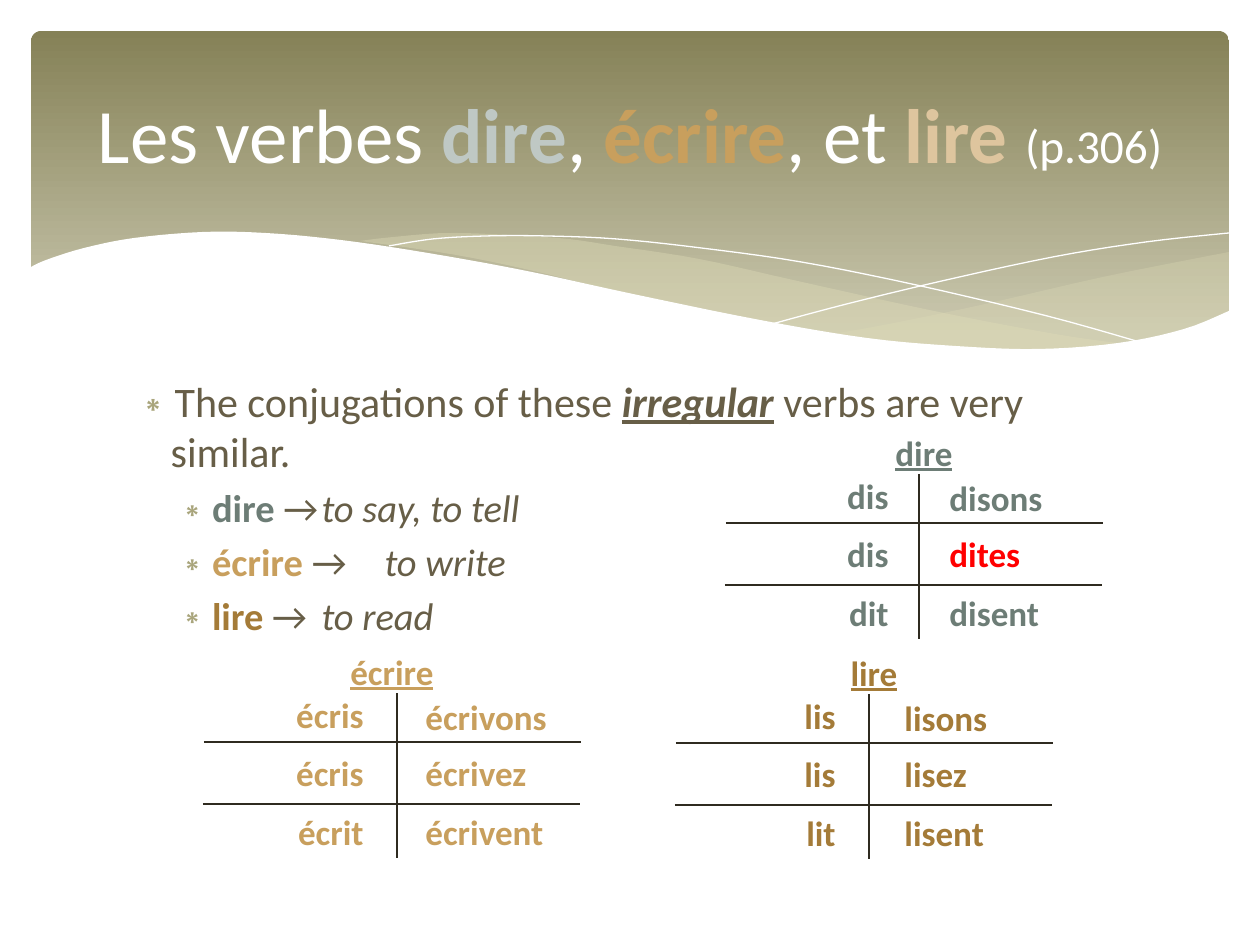
from lxml import etree
from pptx import Presentation, util as u
from pptx.dml.color import RGBColor
from pptx.enum import shapes, text
from pptx.oxml import ns

PX = 914400 / 126
WHITE, BROWN, INK = "FFFFFF", "675E47", "2F2B20"
SLATE, GOLD, OCHRE, RED = "6D7D76", "C89F5D", "A47B38", "FF0000"
LEFT, CENTER, RIGHT = text.PP_ALIGN.LEFT, text.PP_ALIGN.CENTER, text.PP_ALIGN.RIGHT

# Key points of the banner's curves, in px
WAVE = [(29, 268), (46, 260), (84, 248), (134, 238), (203, 232), (266, 233),
        (341, 240), (428, 253), (527, 271), (633, 294), (760, 320), (867, 338),
        (956, 346), (1038, 349), (1118, 343), (1184, 329), (1231, 310)]
SWOOSH_LOW = [(360, 241), (456, 255), (538, 272), (619, 292), (736, 317), (819, 332),
              (893, 343), (959, 349), (1030, 350), (1092, 348), (1125, 344)]
SWOOSH_TOP = [(1125, 344), (1055, 334), (934, 311), (793, 280), (699, 259),
              (615, 246), (557, 238), (455, 233), (394, 237), (360, 241)]
FIN_TOP = [(1229, 252), (1142, 269), (1085, 281), (981, 305), (889, 324), (833, 334)]
FIN_LOW = [(833, 334), (888, 342), (953, 348), (1012, 350), (1087, 347),
           (1150, 338), (1196, 326), (1229, 311)]
FALLING = [(389, 246), (433, 239), (487, 236), (545, 236), (616, 239), (701, 248),
           (801, 262), (916, 285), (1047, 316), (1143, 343)]
RISING = [(772, 324), (847, 304), (942, 281), (1053, 257), (1146, 242), (1229, 233)]


def px(n):
    return u.Emu(round(n * PX))


def rgb(c):
    return RGBColor.from_string(c)


def sub(parent, tag, **attrs):
    return etree.SubElement(parent, ns.qn(tag), attrs)


def place(sp, x, y, w, h):
    sp.left, sp.top, sp.width, sp.height = px(x), px(y), px(w), px(h)


def add_run(p, words, size=20, color=BROWN, bold=False, italic=False, underline=False):
    r = p.add_run()
    r.text = words
    f = r.font
    f.name, f.size, f.color.rgb = "Calibri", u.Pt(size), rgb(color)
    f.bold, f.italic, f.underline = bold, italic, underline


def add_label(s, words, x, y, w, align, **fmt):
    """Text box whose left, centre or right is at x, according to align."""
    shift = {LEFT: 0, CENTER: w / 2, RIGHT: w}[align]
    tf = s.shapes.add_textbox(px(x - shift), px(y), px(w), px(55)).text_frame
    tf.word_wrap = True
    tf.auto_size = text.MSO_AUTO_SIZE.SHAPE_TO_FIT_TEXT
    p = tf.paragraphs[0]
    p.alignment = align
    add_run(p, words, **fmt)


def add_rule(s, x1, y1, x2, y2):
    c = s.shapes.add_connector(shapes.MSO_CONNECTOR.STRAIGHT, px(x1), px(y1), px(x2), px(y2))
    c.line.color.rgb, c.line.width = rgb(INK), u.Pt(1.5)
    sub(c._element.spPr, "a:effectLst")


def smooth(pts, steps=5):
    """Catmull-Rom curve through the points."""
    ext = [pts[0], *pts, pts[-1]]
    out = [pts[0]]
    for a, b, c, d in zip(ext, ext[1:], ext[2:], ext[3:]):
        for t in (i / steps for i in range(1, steps + 1)):
            out.append(tuple(
                (2 * q + (r - p) * t + (2 * p - 5 * q + 4 * r - v) * t ** 2
                 + (3 * q - p - 3 * r + v) * t ** 3) / 2
                for p, q, r, v in zip(a, b, c, d)))
    return out


def add_outline(s, pts, fill=None, opacity=100):
    """Filled area, or a white hairline when there is no fill."""
    pts = [(px(x), px(y)) for x, y in pts]
    fb = s.shapes.build_freeform(*pts[0])
    fb.add_line_segments(pts[1:], close=fill is not None)
    sp = fb.convert_to_shape()
    sp.shadow.inherit = False
    if fill is None:
        sp.fill.background()
        sp.line.color.rgb, sp.line.width = rgb(WHITE), 0
        return
    sp.line.fill.background()
    sp.fill.solid()
    sp.fill.fore_color.rgb = rgb(fill)
    if opacity < 100:
        clr = sp._element.spPr.find(".//" + ns.qn("a:srgbClr"))
        sub(clr, "a:alpha", val=str(opacity * 1000))


def add_banner(s):
    sp = s.shapes.add_shape(shapes.MSO_SHAPE.ROUNDED_RECTANGLE, px(31), px(31), px(1198), px(340))
    sp.adjustments[0] = 0.03
    sp.shadow.inherit = False
    sp.line.fill.background()
    sp.fill.gradient()
    sp.fill.gradient_angle = 270
    for stop, pos, c in zip(sp.fill.gradient_stops, (0, 0.9), ("858157", "CBC9B0")):
        stop.position, stop.color.rgb = pos, rgb(c)
    add_outline(s, smooth(FIN_TOP) + smooth(FIN_LOW), "DFDCB7", 29)
    add_outline(s, smooth(SWOOSH_LOW) + smooth(SWOOSH_TOP), "DFDCB7", 40)
    add_outline(s, smooth(FALLING))
    add_outline(s, smooth(RISING))
    add_outline(s, smooth(WAVE) + [(1231, 414), (29, 414)], WHITE)


def fill_title(sp):
    place(sp, 63, 47, 1134, 172)
    sp.text_frame.vertical_anchor = text.MSO_ANCHOR.MIDDLE
    p = sp.text_frame.paragraphs[0]
    p.alignment = CENTER
    for words, color, bold in (("Les verbes ", WHITE, False), ("dire", "BFC8C4", True),
                               (", ", WHITE, False), ("écrire", GOLD, True),
                               (", et ", WHITE, False), ("lire ", "DEC59E", True)):
        add_run(p, words, size=44, color=color, bold=bold)
    add_run(p, "(p.306)", size=27, color=WHITE)


def add_bullet(p, level):
    p.level = level
    pPr = p._p.get_or_add_pPr()
    pPr.set("marL", str(px((38, 79)[level])))
    pPr.set("indent", str(px(-38)))
    sub(sub(pPr, "a:buClr"), "a:srgbClr", val="A9A57C")
    sub(pPr, "a:buChar", char="∗")


def fill_body(sp):
    place(sp, 120, 369, 1020, 475)
    tf = sp.text_frame
    tf.auto_size = text.MSO_AUTO_SIZE.NONE
    p = tf.paragraphs[0]
    add_bullet(p, 0)
    add_run(p, "The conjugations of these ", size=24)
    add_run(p, "irregular", size=24, bold=True, italic=True, underline=True)
    add_run(p, " verbs are very similar.", size=24)
    for verb, meaning, color in (("dire ", "to say, to tell", SLATE),
                                 ("écrire ", "to write", GOLD),
                                 ("lire ", "to read", OCHRE)):
        p = tf.add_paragraph()
        add_bullet(p, 1)
        add_run(p, verb, size=22, color=color, bold=True)
        add_run(p, "→\t", size=22)
        add_run(p, meaning, size=22, italic=True)


def add_conjugation(s, x, y, columns, verb, singular, plural, color, irregular=()):
    """Cross of rules with its top at (x, y); columns holds the x of heading and both sides."""
    middle, left, right = columns
    add_rule(s, x, y, x, y + 165)
    add_rule(s, x - 193, y + 49, x + 184, y + 49)
    add_rule(s, x - 194, y + 111, x + 183, y + 111)
    add_label(s, verb, middle, y - 49, 315, CENTER, color=color, bold=True, underline=True)
    for form, dy, w in zip(singular, (-6, 52, 111), (281, 261, 375)):
        add_label(s, form, left, y + dy, w, RIGHT, color=color, bold=True)
    for form, dy in zip(plural, (-4, 52, 111)):
        add_label(s, form, right, y + dy, 320, LEFT, bold=True,
                  color=RED if form in irregular else color)


def main():
    prs = Presentation()
    prs.slide_width, prs.slide_height = px(1260), px(945)
    s = prs.slides.add_slide(prs.slide_layouts[1])
    title, body = s.placeholders

    # Banner, with the placeholders brought in front of it
    add_banner(s)
    for sp in (body, title):
        s.shapes._spTree.append(sp._element)
    fill_title(title)
    fill_body(body)

    # Conjugation tables
    add_conjugation(s, 869, 694, (874, 848, 892), "lire",
                    ("lis", "lis", "lit"), ("lisons", "lisez", "lisent"), OCHRE)
    add_conjugation(s, 919, 474, (924, 901, 937), "dire",
                    ("dis", "dis", "dit"), ("disons", "dites", "disent"), SLATE, ("dites",))
    add_conjugation(s, 397, 693, (392, 376, 413), "écrire",
                    ("écris", "écris", "écrit"), ("écrivons", "écrivez", "écrivent"), GOLD)
    prs.save("out.pptx")


if __name__ == "__main__":
    main()
